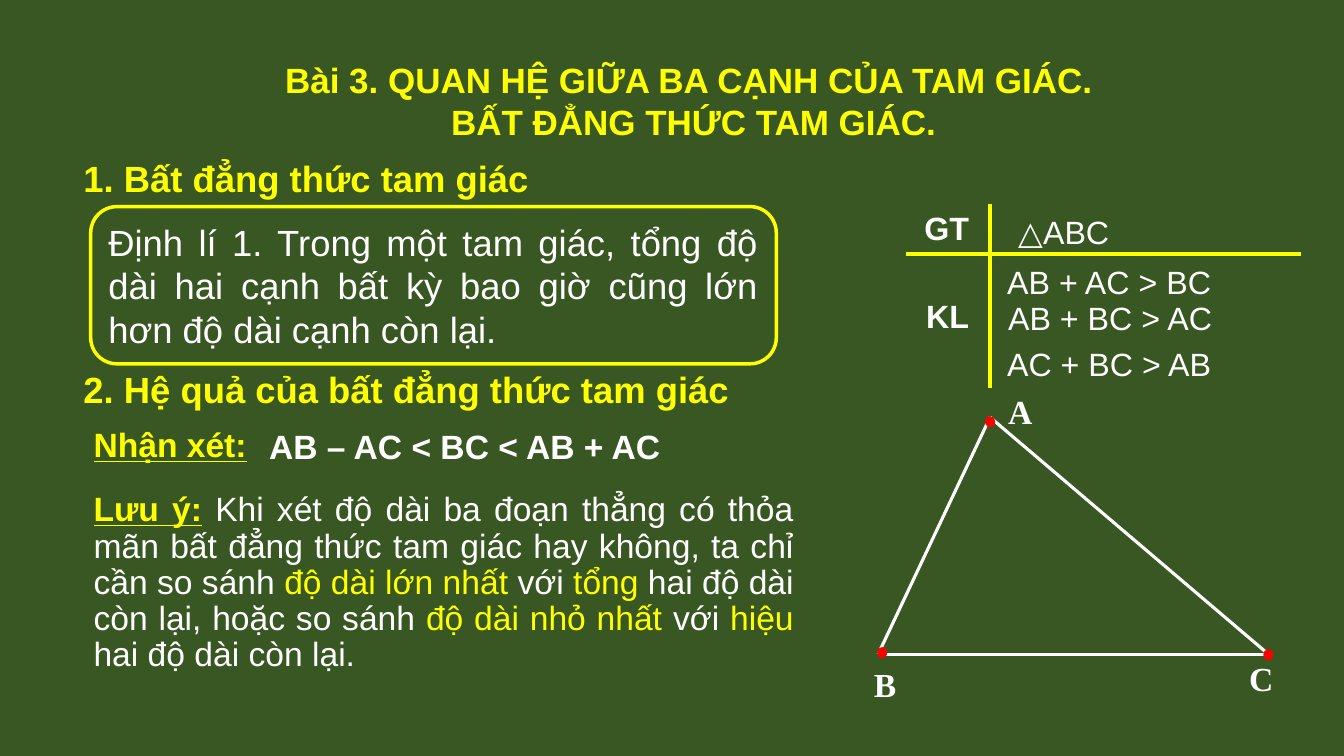
from pptx import Presentation
from pptx.dml.color import RGBColor
from pptx.enum.shapes import MSO_CONNECTOR, MSO_SHAPE
from pptx.enum.text import MSO_ANCHOR, MSO_AUTO_SIZE, PP_ALIGN
from pptx.oxml.ns import qn
from pptx.util import Inches, Pt
from lxml.etree import SubElement

COLORS = {"board": "385723", "yellow": "FFFF00", "white": "FFFFFF", "red": "FF0000"}


def color(name):
    return RGBColor.from_string(COLORS[name])


def box(left, top, width, height):
    return [Inches(value) for value in (left, top, width, height)]


def add_run(paragraph, text, size, ink="white", bold=False, underline=False, font="Arial"):
    run = paragraph.add_run()
    run.text = text
    run.font.name = font
    run.font.size = Pt(size)
    run.font.bold = bold
    run.font.underline = underline
    run.font.color.rgb = color(ink)


def add_text(slide, place, text, size, align=PP_ALIGN.LEFT, **style):
    frame = slide.shapes.add_textbox(*box(*place)).text_frame
    frame.word_wrap = True
    paragraph = frame.paragraphs[0]
    paragraph.alignment = align
    if text:
        add_run(paragraph, text, size, **style)
    return paragraph


def add_line(slide, start, end, ink, width):
    ends = [Inches(value) for value in (*start, *end)]
    line = slide.shapes.add_connector(MSO_CONNECTOR.STRAIGHT, *ends)
    line.line.color.rgb = color(ink)
    line.line.width = Pt(width)
    SubElement(line._element.spPr, qn("a:effectLst"))


def add_title(slide, place, lines):
    title = slide.shapes.title
    title.left, title.top, title.width, title.height = box(*place)
    frame = title.text_frame
    frame.word_wrap = True
    frame.auto_size = MSO_AUTO_SIZE.NONE
    frame.vertical_anchor = MSO_ANCHOR.TOP
    for index, text in enumerate(lines):
        paragraph = frame.add_paragraph() if index else frame.paragraphs[0]
        paragraph.alignment = PP_ALIGN.CENTER
        paragraph.line_spacing = 1.0
        paragraph.space_before = Pt(0)
        add_run(paragraph, text, 25, "yellow", True)


def add_theorem(slide, place, text):
    theorem = slide.shapes.add_shape(MSO_SHAPE.ROUNDED_RECTANGLE, *box(*place))
    theorem.shadow.inherit = False
    theorem.fill.background()
    theorem.line.color.rgb = color("yellow")
    theorem.line.width = Pt(2.5)
    frame = theorem.text_frame
    frame.word_wrap = True
    frame.vertical_anchor = MSO_ANCHOR.MIDDLE
    paragraph = frame.paragraphs[0]
    paragraph.alignment = PP_ALIGN.JUSTIFY
    paragraph.space_before = Pt(12)
    paragraph.space_after = Pt(6)
    add_run(paragraph, text, 26)


def add_note(slide, place):
    note = add_text(slide, place, "", 24, PP_ALIGN.JUSTIFY)
    note.line_spacing = 0.9
    add_run(note, "Lưu ý:", 24, "yellow", True, True)
    add_run(note, " ", 24, bold=True)
    for text, ink in (
        ("Khi xét độ dài ba đoạn thẳng có thỏa mãn bất đẳng thức tam giác hay không, "
         "ta chỉ cần so sánh ", "white"),
        ("độ dài lớn nhất ", "yellow"),
        ("với ", "white"),
        ("tổng ", "yellow"),
        ("hai độ dài còn lại, hoặc so sánh ", "white"),
        ("độ dài nhỏ nhất ", "yellow"),
        ("với ", "white"),
        ("hiệu ", "yellow"),
        ("hai độ dài còn lại.", "white"),
    ):
        add_run(note, text, 24, ink)


def add_hypothesis_table(slide):
    add_line(slide, (8.99, 2.52), (12.9, 2.52), "yellow", 2.5)
    add_line(slide, (9.82, 2.02), (9.82, 3.85), "yellow", 2.5)
    for label, top in (("GT", 2.02), ("KL", 2.89)):
        add_text(slide, (8.71, top, 1, 0.49), label, 23, PP_ALIGN.RIGHT, bold=True)
    for statement, left, top in (
        ("△ABC", 10, 2.06),
        ("AB + AC > BC", 9.89, 2.55),
        ("AB + BC > AC", 9.9, 2.91),
        ("AC + BC > AB", 9.89, 3.37),
    ):
        add_text(slide, (left, top, 2.58, 0.49), statement, 23)


def add_triangle(slide):
    a, b, c = (9.82, 4.14), (8.71, 6.49), (12.58, 6.49)
    for start, end in ((a, b), (a, c), (b, c)):
        add_line(slide, start, end, "white", 2.25)
    for name, label, point in (
        ("A", (9.9, 3.83), (9.77, 4.13)),
        ("B", (8.57, 6.54), (8.7, 6.42)),
        ("C", (12.29, 6.48), (12.53, 6.44)),
    ):
        add_text(slide, (*label, 0.6, 0.64), name, 24, bold=True, font="Times New Roman")
        vertex = slide.shapes.add_shape(MSO_SHAPE.OVAL, *box(*point, 0.1, 0.11))
        vertex.shadow.inherit = False
        vertex.fill.solid()
        vertex.fill.fore_color.rgb = color("red")
        vertex.line.fill.background()


def main():
    lesson = Presentation()
    lesson.slide_width, lesson.slide_height = Inches(13.33), Inches(7.5)
    slide = lesson.slides.add_slide(lesson.slide_layouts[5])
    slide.background.fill.solid()
    slide.background.fill.fore_color.rgb = color("board")

    add_title(slide, (2.67, 0.53, 8.32, 0.94), (
        "Bài 3. QUAN HỆ GIỮA BA CẠNH CỦA TAM GIÁC.",
        " BẤT ĐẲNG THỨC TAM GIÁC.",
    ))
    for heading, top in (
        ("1. Bất đẳng thức tam giác", 1.5),
        ("2. Hệ quả của bất đẳng thức tam giác", 3.59),
    ):
        add_text(slide, (0.73, top, 6.9, 0.54), heading, 26, ink="yellow", bold=True)
    add_theorem(slide, (0.9, 2.05, 6.8, 1.56),
                "Định lí 1. Trong một tam giác, tổng độ dài hai cạnh bất kỳ "
                "bao giờ cũng lớn hơn độ dài cạnh còn lại.")
    add_text(slide, (0.83, 4.16, 1.74, 0.5), "Nhận xét:", 24,
             ink="yellow", bold=True, underline=True)
    add_text(slide, (2.57, 4.18, 4.74, 0.5), "AB – AC < BC < AB + AC", 24, bold=True)
    add_note(slide, (0.83, 4.84, 7.14, 1.92))
    add_hypothesis_table(slide)
    add_triangle(slide)
    lesson.save("out.pptx")


if __name__ == "__main__":
    main()
